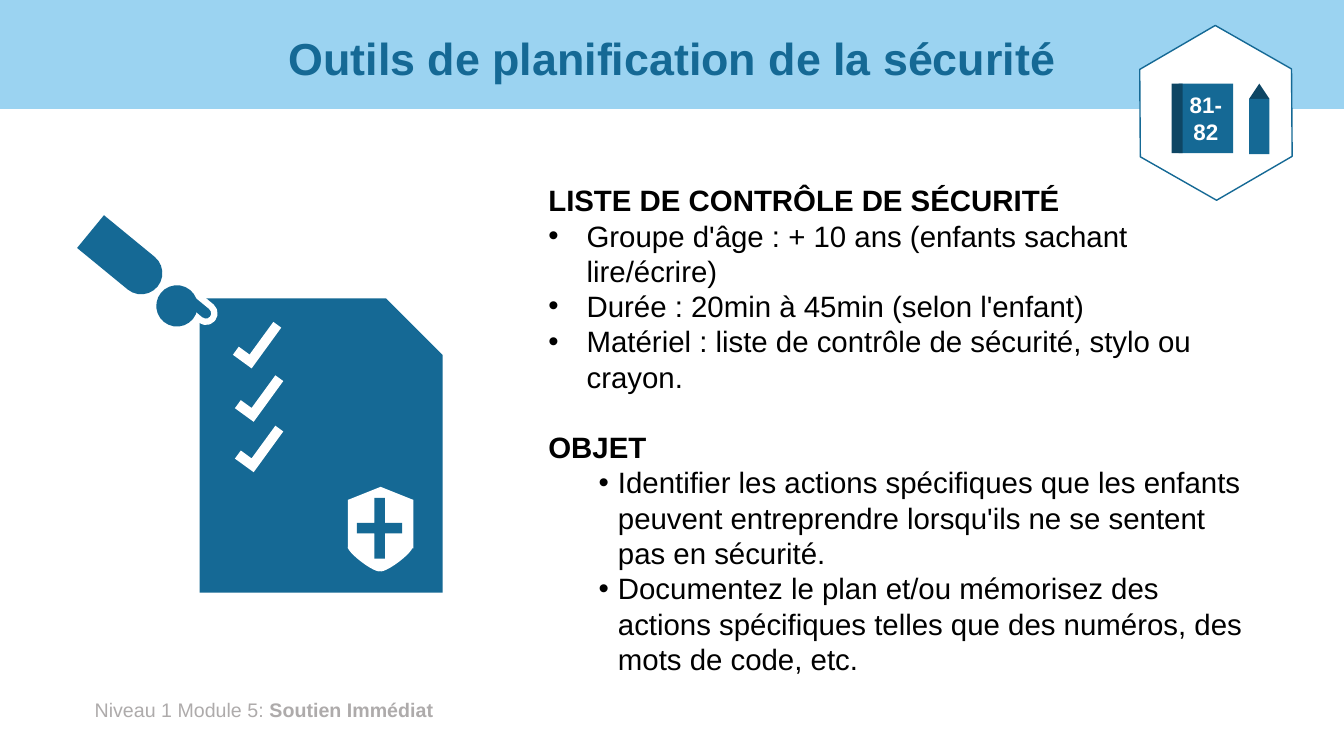
from lxml import etree
from pptx import Presentation
from pptx import util as u
from pptx.dml.color import RGBColor
from pptx.enum import shapes, text
from pptx.oxml import ns

KIND = shapes.MSO_SHAPE
COLOURS = {
    "sky": "9BD3F1",
    "blue": "156995",
    "navy": "0E4664",
    "grey": "AEABAB",
    "white": "FFFFFF",
    "black": "000000",
}


class Slide:
    scale = 9144
    face = "Arial"

    def __init__(self, deck):
        self.page = deck.slides.add_slide(deck.slide_layouts[6])

    def px(self, *lengths):
        return [u.Emu(length * self.scale) for length in lengths]

    def colour(self, name):
        return RGBColor.from_string(COLOURS[name])

    def font(self, font, size, colour, bold=False):
        font.name = self.face
        font.size = u.Pt(size)
        font.bold = bold
        font.color.rgb = self.colour(colour)

    def shape(self, kind, place, fill, turn=0, adjust=(), line=None, width=1):
        shape = self.page.shapes.add_shape(kind, *self.px(*place))
        shape.shadow.inherit = False
        shape.rotation = turn
        for index, value in enumerate(adjust):
            shape.adjustments[index] = value
        shape.fill.solid()
        shape.fill.fore_color.rgb = self.colour(fill)
        if line:
            shape.line.color.rgb = self.colour(line)
            shape.line.width = u.Pt(width)
        else:
            shape.line.fill.background()
        return shape

    def box(self, place):
        frame = self.page.shapes.add_textbox(*self.px(*place)).text_frame
        frame.word_wrap = True
        return frame

    def label(self, frame, words, size, colour, spacing=None):
        frame.vertical_anchor = text.MSO_ANCHOR.MIDDLE
        para = frame.paragraphs[0]
        para.text = words
        para.alignment = text.PP_ALIGN.CENTER
        para.line_spacing = spacing
        self.font(para.font, size, colour, True)

    def footer(self, place, spans):
        para = self.box(place).paragraphs[0]
        for words, bold in spans:
            span = para.add_run()
            span.text = words
            self.font(span.font, 14, "grey", bold)

    def bullet(self, para, left, hang):
        margin, indent = self.px(left, -hang)
        props = para._p.get_or_add_pPr()
        props.set("marL", str(margin))
        props.set("indent", str(indent))
        marks = [
            etree.Element(ns.qn("a:buClr")),
            etree.Element(ns.qn("a:buFont"), typeface=self.face),
            etree.Element(ns.qn("a:buChar"), char="•"),
        ]
        etree.SubElement(marks[0], ns.qn("a:srgbClr"), val=COLOURS["black"])
        for mark in marks:
            props.find(ns.qn("a:defRPr")).addprevious(mark)

    def sections(self, place, sections, size=21, pitch=25.2):
        frame = self.box(place)
        para = frame.paragraphs[0]
        for number, (heading, level, left, hang, items) in enumerate(sections):
            if number:
                para = frame.add_paragraph()
                para.space_before = u.Pt(pitch)
            para.text = heading
            para.line_spacing = u.Pt(pitch)
            self.font(para.font, size, "black", True)
            for words in items:
                para = frame.add_paragraph()
                para.text = words
                para.level = level
                para.line_spacing = u.Pt(pitch)
                self.font(para.font, size, "black")
                self.bullet(para, left, hang)


def draw_badge(slide):
    slide.shape(KIND.HEXAGON, (1119, 37, 174, 150), "white", 29.7, (0.29, 1.155), "blue")
    book = slide.shape(KIND.RECTANGLE, (1169, 83, 54, 69), "blue")
    book.text_frame.word_wrap = True
    slide.label(book.text_frame, "81-82", 16, "white")
    slide.shape(KIND.RECTANGLE, (1162, 83, 11, 69), "navy")
    slide.shape(KIND.ISOSCELES_TRIANGLE, (1239, 83, 20, 15), "navy")
    slide.shape(KIND.RECTANGLE, (1239, 98, 20, 55), "blue")


def draw_checklist(slide):
    slide.shape(KIND.SNIP_1_RECTANGLE, (198, 296, 241, 292), "blue", adjust=(0.233,))
    for left, top in ((230, 327), (232, 380), (232, 430)):
        slide.shape(KIND.CORNER, (left, top, 50, 23), "white", 306, (0.422, 0.433))


def draw_shield(slide):
    slide.shape(KIND.RECTANGLE, (345, 496, 65, 48), "white")
    for left, turn in ((376, 233.2), (354, 307)):
        slide.shape(KIND.FLOWCHART_STORED_DATA, (left, 528, 24, 40), "white", turn)
    slide.shape(KIND.RECTANGLE, (355, 520, 44, 28), "white")
    slide.shape(KIND.ISOSCELES_TRIANGLE, (345, 483, 65, 13), "white")
    slide.shape(KIND.MATH_PLUS, (346, 483, 61, 82), "blue", adjust=(0.17,))


def draw_arm(slide):
    rounded = KIND.ROUND_2_SAME_RECTANGLE
    slide.shape(rounded, (188, 286, 17, 37), "blue", 129.4, (0.5, 0), "white", 4.5)
    slide.shape(KIND.OVAL, (155, 283, 41, 41), "blue", 24.4)
    slide.shape(rounded, (102, 214, 42, 86), "blue", 129.4, (0.5, 0))


def main():
    deck = Presentation()
    deck.slide_width, deck.slide_height = u.Inches(13.33), u.Inches(7.5)
    slide = Slide(deck)
    slide.shape(KIND.RECTANGLE, (0, 0, 1333, 108), "sky")
    slide.footer((84, 687, 455, 34), [("Niveau 1 Module 5: ", False), ("Soutien Immédiat", True)])
    title = slide.box((92, 13, 1150, 95))
    slide.label(title, "Outils de planification de la sécurité", 32, "blue", 0.9)
    slide.sections((534, 176, 713, 399), [
        ("LISTE DE CONTRÔLE DE SÉCURITÉ", 0, 38, 38, [
            "Groupe d'âge : + 10 ans (enfants sachant lire/écrire)",
            "Durée : 20min à 45min (selon l'enfant)",
            "Matériel : liste de contrôle de sécurité, stylo ou crayon.",
        ]),
        ("OBJET", 1, 69, 19, [
            "Identifier les actions spécifiques que les enfants peuvent "
            "entreprendre lorsqu'ils ne se sentent pas en sécurité.",
            "Documentez le plan et/ou mémorisez des actions spécifiques "
            "telles que des numéros, des mots de code, etc.",
        ]),
    ])
    draw_badge(slide)
    draw_checklist(slide)
    draw_shield(slide)
    draw_arm(slide)
    deck.save("out.pptx")


if __name__ == "__main__":
    main()
